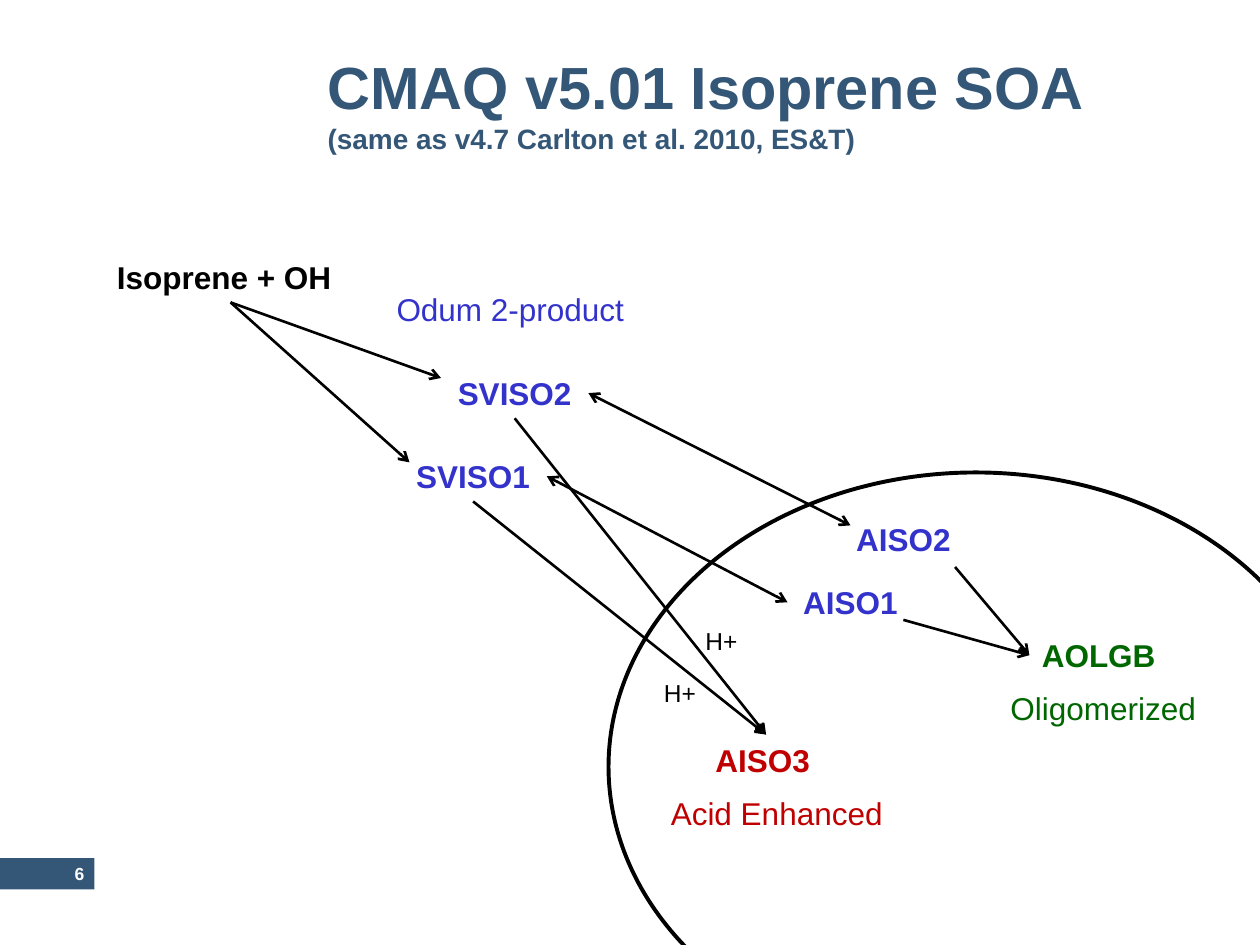
from lxml import etree
from pptx import Presentation
from pptx.dml.color import RGBColor
from pptx.enum.shapes import MSO_CONNECTOR, MSO_SHAPE
from pptx.enum.text import MSO_ANCHOR, MSO_AUTO_SIZE, PP_ALIGN
from pptx.oxml.ns import qn
from pptx.util import Inches, Pt

LEFT, CENTER, RIGHT = PP_ALIGN.LEFT, PP_ALIGN.CENTER, PP_ALIGN.RIGHT
TOP, MIDDLE = MSO_ANCHOR.TOP, MSO_ANCHOR.MIDDLE
RECT, OVAL = MSO_SHAPE.RECTANGLE, MSO_SHAPE.OVAL
STRAIGHT = MSO_CONNECTOR.STRAIGHT
GROW, NO_FIT = MSO_AUTO_SIZE.SHAPE_TO_FIT_TEXT, MSO_AUTO_SIZE.NONE
BOTTOM_SIDE, LEFT_SIDE, RIGHT_SIDE, TOP_SIDE = 2, 1, 3, 0

NAVY, BLACK, WHITE = "355777", "000000", "FFFFFF"
BLUE, GREEN, RED = "3333CC", "006600", "C00000"


def rgb(value):
    return RGBColor.from_string(value)


class Deck:
    font = "Arial"

    def __init__(self, prs):
        self.s = prs.slides.add_slide(prs.slide_layouts[5])

    def run(self, p, text, size, color, bold=False):
        r = p.add_run()
        r.text = text
        r.font.name = self.font
        r.font.size = Pt(size)
        r.font.bold = bold
        r.font.color.rgb = rgb(color)

    def title(self, box, heading, subheading):
        sp = self.s.shapes.title
        sp.left, sp.top, sp.width, sp.height = map(Inches, box)
        tf = sp.text_frame
        tf.word_wrap = True
        tf.auto_size = NO_FIT
        tf.vertical_anchor = TOP
        tf.margin_top = Inches(0.1)
        p = tf.paragraphs[0]
        p.alignment = LEFT
        self.run(p, heading, 34, NAVY, True)
        p.add_line_break()
        self.run(p, subheading, 16, NAVY, True)

    def shape(self, kind, box, fill=None, line=None, width=2.25):
        sp = self.s.shapes.add_shape(kind, *map(Inches, box))
        sp.shadow.inherit = False
        if fill:
            sp.fill.solid()
            sp.fill.fore_color.rgb = rgb(fill)
        else:
            sp.fill.background()
        if line:
            sp.line.color.rgb = rgb(line)
            sp.line.width = Pt(width)
        else:
            sp.line.fill.background()

    def label(self, text, box, color, size=18, bold=False, align=LEFT):
        sp = self.s.shapes.add_textbox(*map(Inches, box))
        tf = sp.text_frame
        tf.word_wrap = True
        tf.auto_size = GROW
        p = tf.paragraphs[0]
        p.alignment = align
        self.run(p, text, size, color, bold)
        return sp

    def page_number(self, text, box):
        sp = self.label(text, box, WHITE, 10, True, RIGHT)
        tf = sp.text_frame
        tf.auto_size = NO_FIT
        tf.vertical_anchor = MIDDLE
        tf.margin_left = tf.margin_right = tf.margin_top = tf.margin_bottom = 0

    def arrow(self, start, end, both=False):
        """Each end is a point in inches or a (shape, side) pair to join."""
        cxn = self.s.shapes.add_connector(STRAIGHT, 0, 0, 0, 0)
        if isinstance(start[0], (int, float)):
            cxn.begin_x, cxn.begin_y = map(Inches, start)
        else:
            cxn.begin_connect(*start)
        if isinstance(end[0], (int, float)):
            cxn.end_x, cxn.end_y = map(Inches, end)
        else:
            cxn.end_connect(*end)
        cxn.line.color.rgb = rgb(BLACK)
        cxn.line.width = Pt(1.5)
        ln = cxn.line._get_or_add_ln()
        for tag in ("a:headEnd", "a:tailEnd") if both else ("a:tailEnd",):
            etree.SubElement(ln, qn(tag), type="arrow")
        etree.SubElement(ln.getparent(), qn("a:effectLst"))


def main():
    prs = Presentation()
    prs.slide_width, prs.slide_height = Inches(10), Inches(7.5)
    d = Deck(prs)

    d.shape(RECT, (0, 6.81, 0.75, 0.25), fill=NAVY)
    d.title((2.5, 0.3, 7, 1.25), "CMAQ v5.01 Isoprene SOA",
            "(same as v4.7 Carlton et al. 2010, ES&T)")
    d.page_number("6", (0, 6.81, 0.67, 0.25))
    d.shape(OVAL, (4.83, 3.75, 5.83, 4.67), line=BLACK)

    species = {}
    for name, x, y, w, color, align in (
        ("Isoprene + OH", 0.83, 2, 2, BLACK, LEFT),
        ("SVISO1", 3.17, 3.58, 1.17, BLUE, CENTER),
        ("SVISO2", 3.5, 2.92, 1.17, BLUE, CENTER),
        ("AISO1", 6.25, 4.58, 1, BLUE, CENTER),
        ("AISO2", 6.67, 4.08, 1, BLUE, CENTER),
        ("AOLGB", 8.17, 5, 1.25, GREEN, LEFT),
        ("AISO3", 5.58, 5.83, 1, RED, LEFT),
    ):
        species[name] = d.label(name, (x, y, w, 0.4), color, bold=True, align=align)

    isoprene = (species["Isoprene + OH"], BOTTOM_SIDE)
    acid_product = (species["AISO3"], TOP_SIDE)
    oligomer = (species["AOLGB"], LEFT_SIDE)
    d.arrow(isoprene, (3.25, 3.67))
    d.arrow(isoprene, (3.5, 3))
    d.arrow((species["SVISO1"], RIGHT_SIDE), (species["AISO1"], LEFT_SIDE), both=True)
    d.arrow((species["SVISO2"], RIGHT_SIDE), (6.75, 4.17), both=True)
    for name in ("SVISO2", "SVISO1"):
        d.arrow((species[name], BOTTOM_SIDE), acid_product)
    for start in ((7.58, 4.5), (7.17, 4.92)):
        d.arrow(start, oligomer)

    for x, y in ((5.5, 4.92), (5.17, 5.33)):
        d.label("H+", (x, y, 0.58, 0.34), BLACK, 14)
    d.label("Odum 2-product ", (2.92, 2.25, 2.33, 0.4), BLUE, align=CENTER)
    d.label("Acid Enhanced", (5.08, 6.25, 2.17, 0.4), RED, align=CENTER)
    d.label("Oligomerized", (7.92, 5.42, 1.92, 0.4), GREEN)

    prs.save("out.pptx")


if __name__ == "__main__":
    main()
